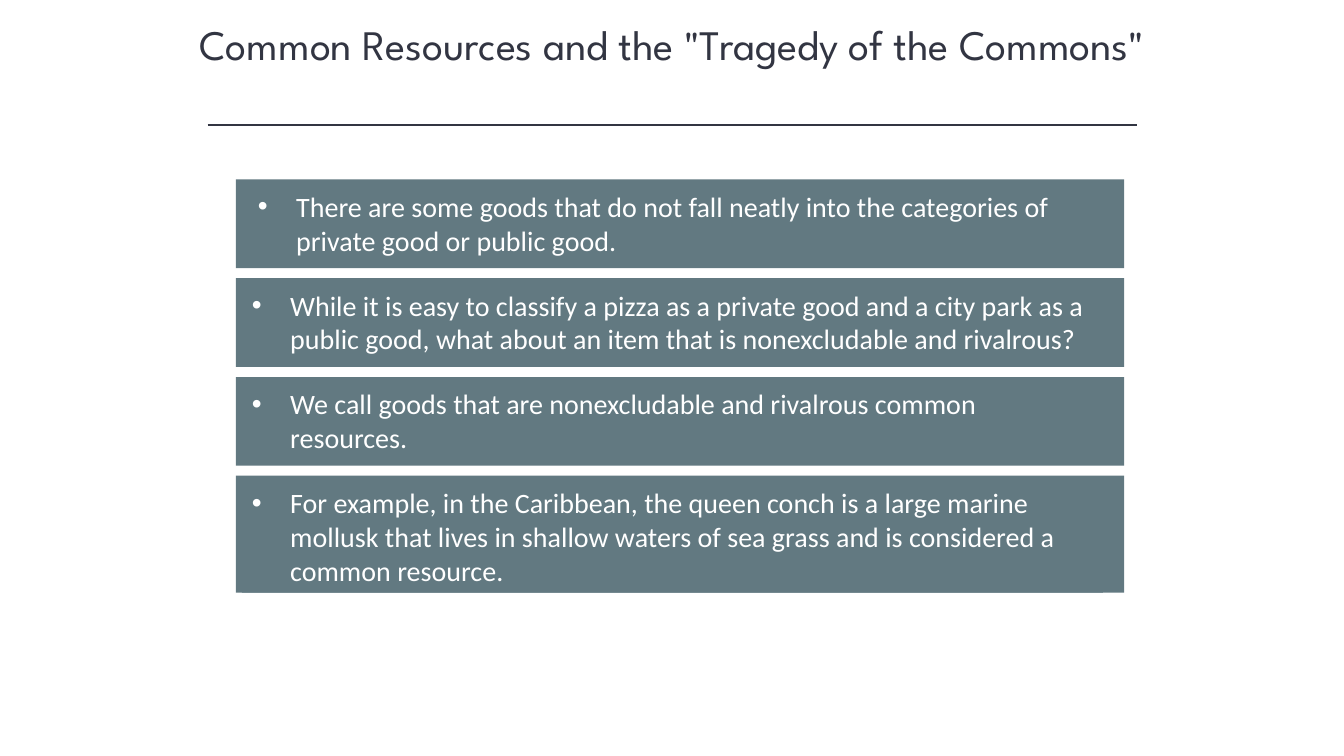
from lxml import etree
from pptx import Presentation
from pptx.dml.color import RGBColor
from pptx.enum.shapes import MSO_CONNECTOR, MSO_SHAPE
from pptx.enum.text import MSO_ANCHOR, PP_ALIGN
from pptx.oxml.ns import qn
from pptx.util import Inches, Pt

NAVY = RGBColor(0x32, 0x35, 0x42)
SLATE = RGBColor(0x62, 0x79, 0x81)
WHITE = RGBColor(0xFF, 0xFF, 0xFF)

TITLE = 'Common Resources and the "Tragedy of the Commons"'
LEFT, TOP, WIDTH, GAP = 2.34, 1.78, 8.81, 0.1
INSET = 0.05

# Card height, text height, text indent from the card's left side, text
CARDS = [
    (0.88, 0.77, 0.12, "There are some goods that do not fall neatly into the "
     "categories of private good or public good."),
    (0.88, 0.77, 0.06, "While it is easy to classify a pizza as a private good "
     "and a city park as a public good, what about an item that is "
     "nonexcludable and rivalrous?"),
    (0.88, 0.77, 0.06, "We call goods that are nonexcludable and rivalrous "
     "common resources."),
    (1.16, 1.11, 0.06, "For example, in the Caribbean, the queen conch is a "
     "large marine mollusk that lives in shallow waters of sea grass and is "
     "considered a common resource."),
]


def set_font(para, name, size, color):
    para.font.name = name
    para.font.size = Pt(size)
    para.font.color.rgb = color


def add_title(slide):
    title = slide.shapes.title
    title.left, title.top = Inches(1.67), Inches(0.13)
    title.width, title.height = Inches(10), Inches(1.11)
    frame = title.text_frame
    frame.text = TITLE
    frame.word_wrap = True
    frame.vertical_anchor = MSO_ANCHOR.TOP
    para = frame.paragraphs[0]
    para.alignment = PP_ALIGN.CENTER
    set_font(para, "League Spartan", 30, NAVY)


def add_rule(slide):
    rule = slide.shapes.add_connector(
        MSO_CONNECTOR.STRAIGHT,
        Inches(2.06), Inches(1.24), Inches(11.28), Inches(1.24))
    rule.line.color.rgb = NAVY
    rule.line.width = Pt(1)
    etree.SubElement(rule._element.spPr, qn("a:effectLst"))


def add_rect(group, left, top, width, height):
    rect = group.shapes.add_shape(
        MSO_SHAPE.RECTANGLE,
        Inches(left), Inches(top), Inches(width), Inches(height))
    rect.shadow.inherit = False
    rect.fill.solid()
    rect.fill.fore_color.rgb = SLATE
    rect.line.fill.background()
    return rect


def add_bullet(para):
    props = para._p.get_or_add_pPr()
    props.set("marL", str(Inches(0.38)))
    props.set("indent", str(-Inches(0.38)))
    etree.SubElement(props, qn("a:buFont"), typeface="Arial")
    etree.SubElement(props, qn("a:buChar"), char="•")


def add_card(slide, top, height, depth, indent, text):
    """Group a bar with the bulleted text block that lies on it."""
    group = slide.shapes.add_group_shape()
    add_rect(group, LEFT, top, WIDTH, height)
    block = add_rect(group, LEFT + indent, top + INSET, 8.54, depth)
    frame = block.text_frame
    frame.text = text
    frame.word_wrap = True
    frame.vertical_anchor = MSO_ANCHOR.TOP
    para = frame.paragraphs[0]
    para.alignment = PP_ALIGN.LEFT
    add_bullet(para)
    set_font(para, "Calibri", 20, WHITE)


def main():
    deck = Presentation()
    deck.slide_width, deck.slide_height = Inches(13.33), Inches(7.5)
    slide = deck.slides.add_slide(deck.slide_layouts.get_by_name("Title Only"))
    add_title(slide)
    add_rule(slide)
    top = TOP
    for height, depth, indent, text in CARDS:
        add_card(slide, top, height, depth, indent, text)
        top += height + GAP
    deck.save("out.pptx")


if __name__ == "__main__":
    main()
